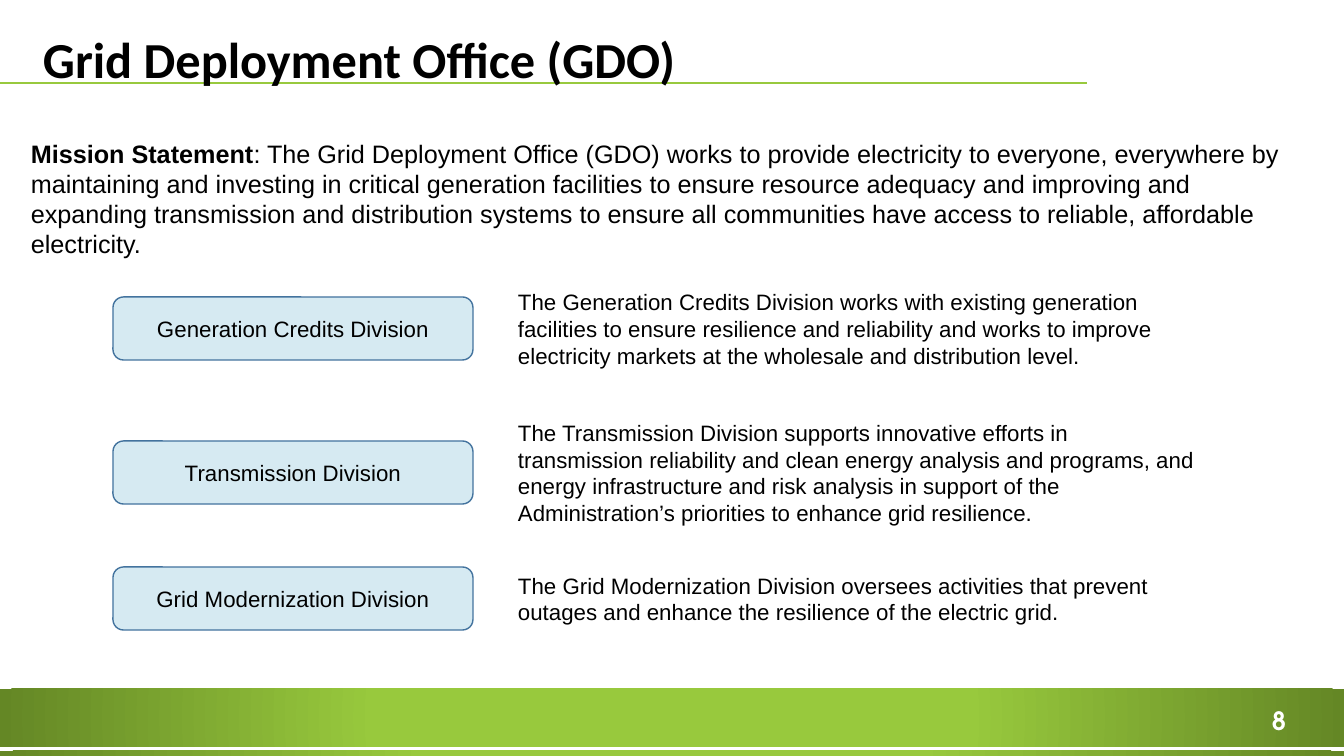
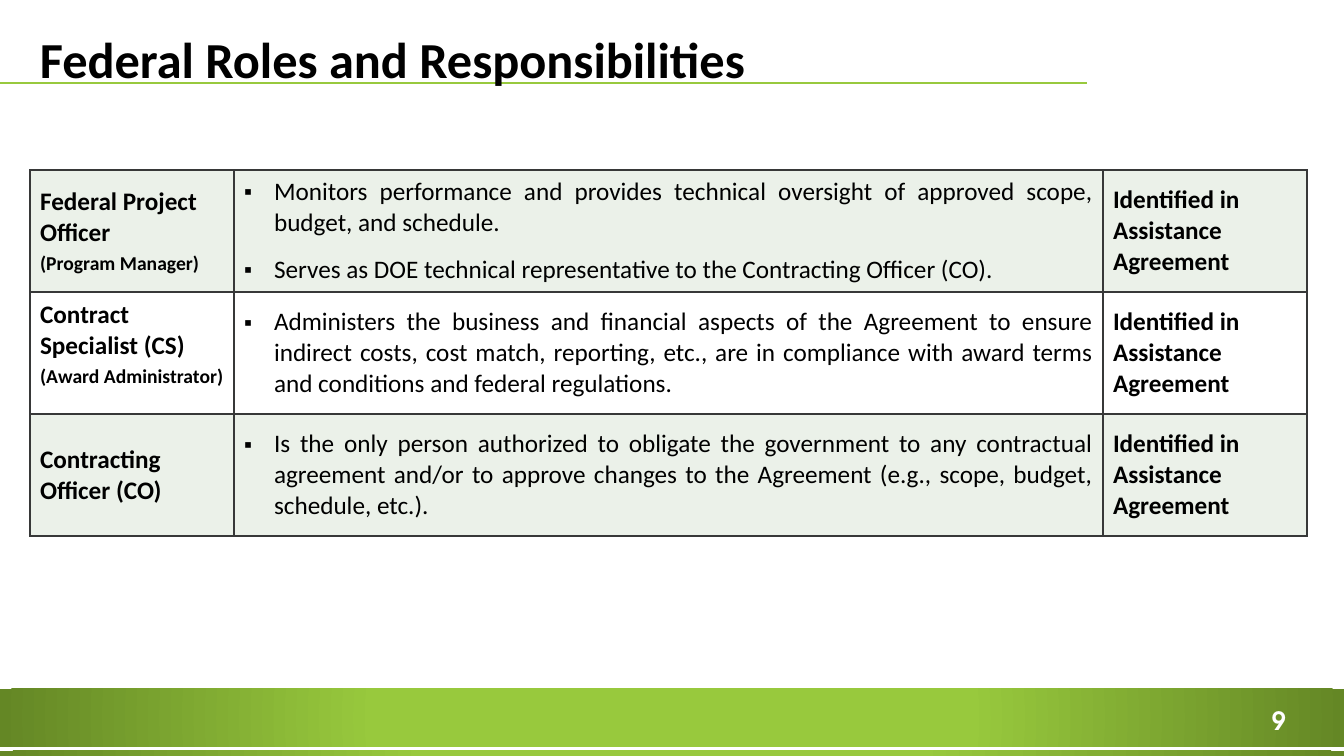
"""Build two slides on the Grid Deployment Office and its federal roles."""
from lxml import etree
from pptx import Presentation
from pptx.dml.color import RGBColor
from pptx.enum.shapes import MSO_CONNECTOR, MSO_SHAPE
from pptx.enum.text import MSO_ANCHOR, PP_ALIGN
from pptx.oxml.ns import qn
from pptx.util import Emu, Pt

SCALE = 914400 / 100.8
WIDTH, HEIGHT = 1344, 756

GREEN = RGBColor(0x98, 0xC9, 0x3D)
DARK_GREEN = RGBColor(0x64, 0x87, 0x25)
PALE_GREEN = RGBColor(0xEB, 0xF1, 0xE9)
BLUE = RGBColor(0x1F, 0x8B, 0xB7)
BLUE_EDGE = RGBColor(0x43, 0x73, 0x9E)
GRID_GRAY = RGBColor(0x37, 0x38, 0x38)
BLACK = RGBColor(0, 0, 0)
WHITE = RGBColor(0xFF, 0xFF, 0xFF)

HEAD_FONT, BODY_FONT, NUMBER_FONT = "Calibri", "Arial", "TeX Gyre Adventor"
DIVISION_SIZE = 15.9

STRAIGHT = MSO_CONNECTOR.STRAIGHT
RECT, ROUND_RECT = MSO_SHAPE.RECTANGLE, MSO_SHAPE.ROUNDED_RECTANGLE
TOP, MIDDLE, BOTTOM = MSO_ANCHOR.TOP, MSO_ANCHOR.MIDDLE, MSO_ANCHOR.BOTTOM
LEFT, CENTER, JUSTIFY = PP_ALIGN.LEFT, PP_ALIGN.CENTER, PP_ALIGN.JUSTIFY


def px(length):
    return Emu(round(length * SCALE))


def child(parent, tag, **attributes):
    return etree.SubElement(parent, qn(tag), attributes)


class Deck:
    def __init__(self):
        self.show = Presentation()
        self.show.slide_width, self.show.slide_height = px(WIDTH), px(HEIGHT)
        self.slide = None

    def start(self, title, number, title_left):
        self.slide = self.show.slides.add_slide(self.show.slide_layouts[6])
        self.rule(0, 83, 1087)
        self.band(689, 58, 0.44)
        self.band(751, 5, 0.37)
        self.text(1262, 700, 48, 40, number, 18, NUMBER_FONT, WHITE, True)
        heading = self.text(title_left, 28, 1277, 66, title, 36, HEAD_FONT,
                            bold=True, anchor=BOTTOM)
        heading.line_spacing = 0.9

    def rule(self, left, top, right):
        line = self.slide.shapes.add_connector(
            STRAIGHT, px(left), px(top), px(right), px(top))
        line.line.color.rgb = GREEN
        line.line.width = Pt(1.75)
        child(line._element.spPr, "a:effectLst")

    def shape(self, kind, left, top, width, height):
        shape = self.slide.shapes.add_shape(
            kind, px(left), px(top), px(width), px(height))
        shape.shadow.inherit = False
        return shape

    def band(self, top, height, inner_stop):
        band = self.shape(RECT, 0, top, WIDTH, height)
        band.line.fill.background()
        band.fill.gradient()
        stops = zip(band.fill.gradient_stops, (inner_stop, 1), (GREEN, DARK_GREEN))
        for stop, position, color in stops:
            stop.position = position
            stop.color.rgb = color
        gradient = band._element.spPr.find(qn("a:gradFill"))
        gradient.remove(gradient.find(qn("a:lin")))
        center = child(gradient, "a:path", path="circle")
        child(center, "a:fillToRect", l="50000", t="50000", r="50000", b="50000")

    def style(self, paragraph, size, font, color=BLACK, bold=False, align=LEFT):
        paragraph.alignment = align
        for run in paragraph.runs:
            run.font.size = Pt(size)
            run.font.name = font
            run.font.bold = bold
            run.font.color.rgb = color

    def text(self, left, top, width, height, words, size, font, color=BLACK,
             bold=False, anchor=TOP):
        box = self.slide.shapes.add_textbox(
            px(left), px(top), px(width), px(height))
        frame = box.text_frame
        frame.word_wrap = True
        frame.vertical_anchor = anchor
        frame.text = words
        self.style(frame.paragraphs[0], size, font, color, bold)
        return frame.paragraphs[0]

    def mission(self, label, statement):
        paragraph = self.text(21, 133, 1290, 132, label, 18, BODY_FONT)
        paragraph.add_run().text = statement
        self.style(paragraph, 18, BODY_FONT)
        paragraph.runs[0].font.bold = True

    def division(self, top, name, description):
        height, description_height = 63, 117
        box = self.shape(ROUND_RECT, 113, top, 360, height)
        box.fill.solid()
        box.fill.fore_color.rgb = BLUE
        color = box._element.spPr.find(qn("a:solidFill"))[0]
        child(color, "a:alpha", val="18000")
        box.line.color.rgb = BLUE_EDGE
        box.line.width = Pt(1)
        box.text_frame.text = name
        box.text_frame.vertical_anchor = MIDDLE
        self.style(box.text_frame.paragraphs[0], DIVISION_SIZE, BODY_FONT,
                   align=CENTER)
        self.text(508, top + (height - description_height) // 2, 697,
                  description_height, description, DIVISION_SIZE, BODY_FONT,
                  anchor=MIDDLE)

    def cell(self, cell, lines, sizes, shaded, gap, bulleted=False):
        properties = cell._tc.get_or_add_tcPr()
        for side in ("a:lnL", "a:lnR", "a:lnT", "a:lnB"):
            edge = child(properties, side, w=str(Pt(1)))
            child(child(edge, "a:solidFill"), "a:srgbClr", val=str(GRID_GRAY))
        if shaded:
            cell.fill.solid()
            cell.fill.fore_color.rgb = PALE_GREEN
        else:
            cell.fill.background()
        cell.vertical_anchor = MIDDLE
        cell.text_frame.text = "\n".join(lines)
        for index, (paragraph, size) in enumerate(
                zip(cell.text_frame.paragraphs, sizes)):
            if bulleted:
                self.bullet(paragraph)
            if index:
                paragraph.space_before = Pt(gap)
            self.style(paragraph, size, HEAD_FONT, bold=not bulleted,
                       align=JUSTIFY if bulleted else LEFT)

    def bullet(self, paragraph):
        properties = paragraph._p.get_or_add_pPr()
        properties.set("marL", str(px(30)))
        properties.set("indent", str(-px(30)))
        child(properties, "a:buSzPct", val="90000")
        child(properties, "a:buFont", typeface=BODY_FONT)
        child(properties, "a:buChar", char="▪")

    def roles(self, rows, source):
        widths, row_height = (204, 869, 204), 122
        table = self.slide.shapes.add_table(
            len(rows), len(widths), px(30), px(170), px(sum(widths)),
            px(row_height * len(rows))).table
        table.first_row = table.horz_banding = False
        for column, width in zip(table.columns, widths):
            column.width = px(width)
        for index, (role, duties, lift) in enumerate(rows):
            table.rows[index].height = px(row_height)
            shaded = index % 2 == 0
            name, work, identified = table.rows[index].cells
            self.cell(name, role, (18, 14), shaded, 2.8)
            name.margin_bottom = px(5 + lift)
            self.cell(work, duties, (18, 18), shaded, 12, bulleted=True)
            self.cell(identified, [source], (18,), shaded, 0)


DIVISIONS = [
    (297, "Generation Credits Division",
     "The Generation Credits Division works with existing generation facilities "
     "to ensure resilience and reliability and works to improve electricity "
     "markets at the wholesale and distribution level."),
    (441, "Transmission Division",
     "The Transmission Division supports innovative efforts in transmission "
     "reliability and clean energy analysis and programs, and energy "
     "infrastructure and risk analysis in support of the Administration’s "
     "priorities to enhance grid resilience."),
    (567, "Grid Modernization Division",
     "The Grid Modernization Division oversees activities that prevent outages "
     "and enhance the resilience of the electric grid."),
]

ROLES = [
    (["Federal Project Officer", "(Program Manager)"],
     ["Monitors performance and provides technical oversight of approved scope, "
      "budget, and schedule.",
      "Serves as DOE technical representative to the Contracting Officer (CO)."],
     0),
    (["Contract Specialist (CS)", "(Award Administrator)"],
     ["Administers the business and financial aspects of the Agreement to ensure "
      "indirect costs, cost match, reporting, etc., are in compliance with award "
      "terms and conditions and federal regulations."],
     18),
    (["Contracting Officer (CO)"],
     ["Is the only person authorized to obligate the government to any "
      "contractual agreement and/or to approve changes to the Agreement (e.g., "
      "scope, budget, schedule, etc.)."],
     0),
]


def main():
    deck = Deck()
    deck.start("Grid Deployment Office (GDO)", "8", 33)
    deck.mission(
        "Mission Statement",
        ": The Grid Deployment Office (GDO) works to provide electricity to "
        "everyone, everywhere by maintaining and investing in critical generation "
        "facilities to ensure resource adequacy and improving and expanding "
        "transmission and distribution systems to ensure all communities have "
        "access to reliable, affordable electricity.")
    for top, name, description in DIVISIONS:
        deck.division(top, name, description)
    deck.start("Federal Roles and Responsibilities", "9", 30)
    deck.roles(ROLES, "Identified in Assistance Agreement")
    deck.show.save("out.pptx")


if __name__ == "__main__":
    main()
